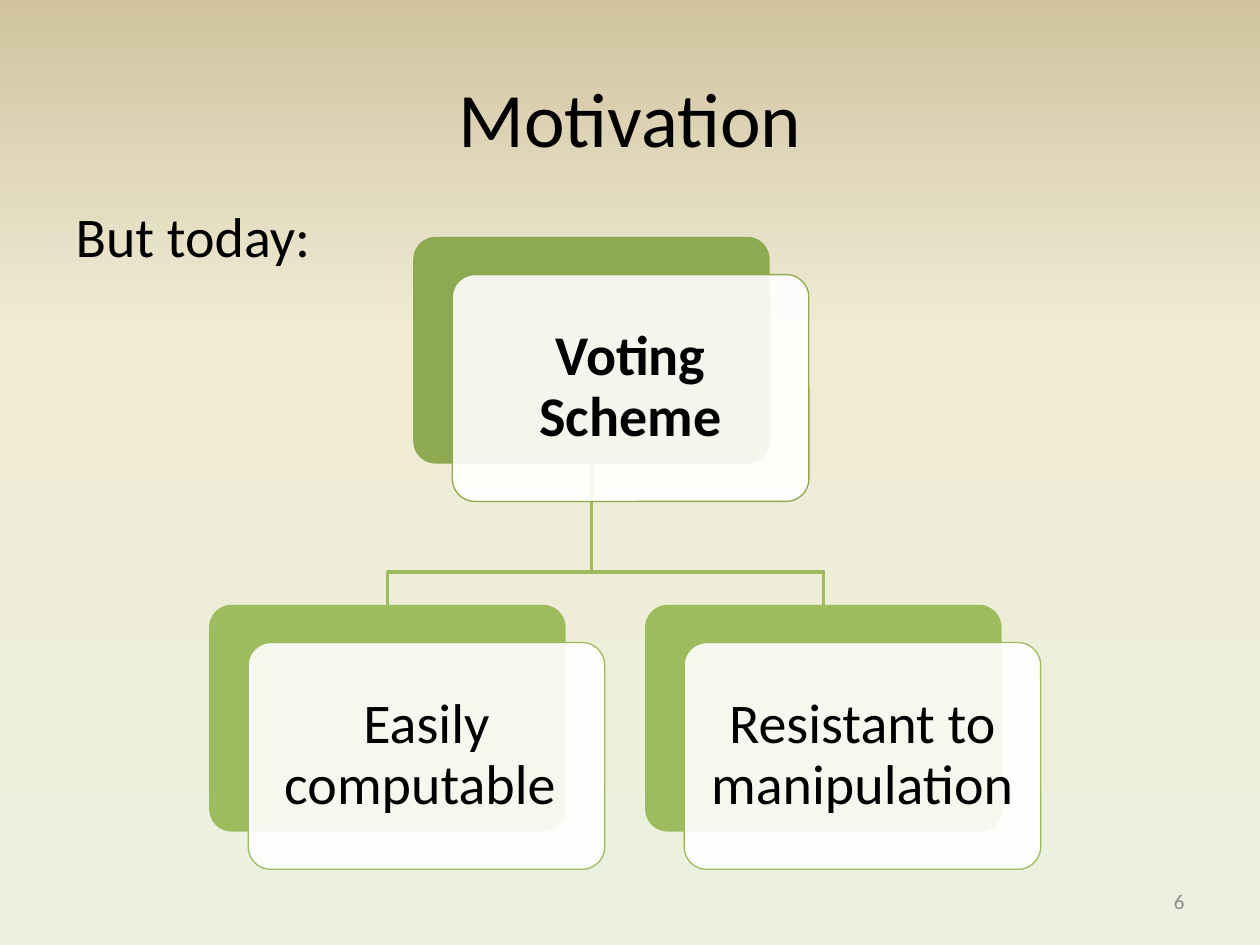
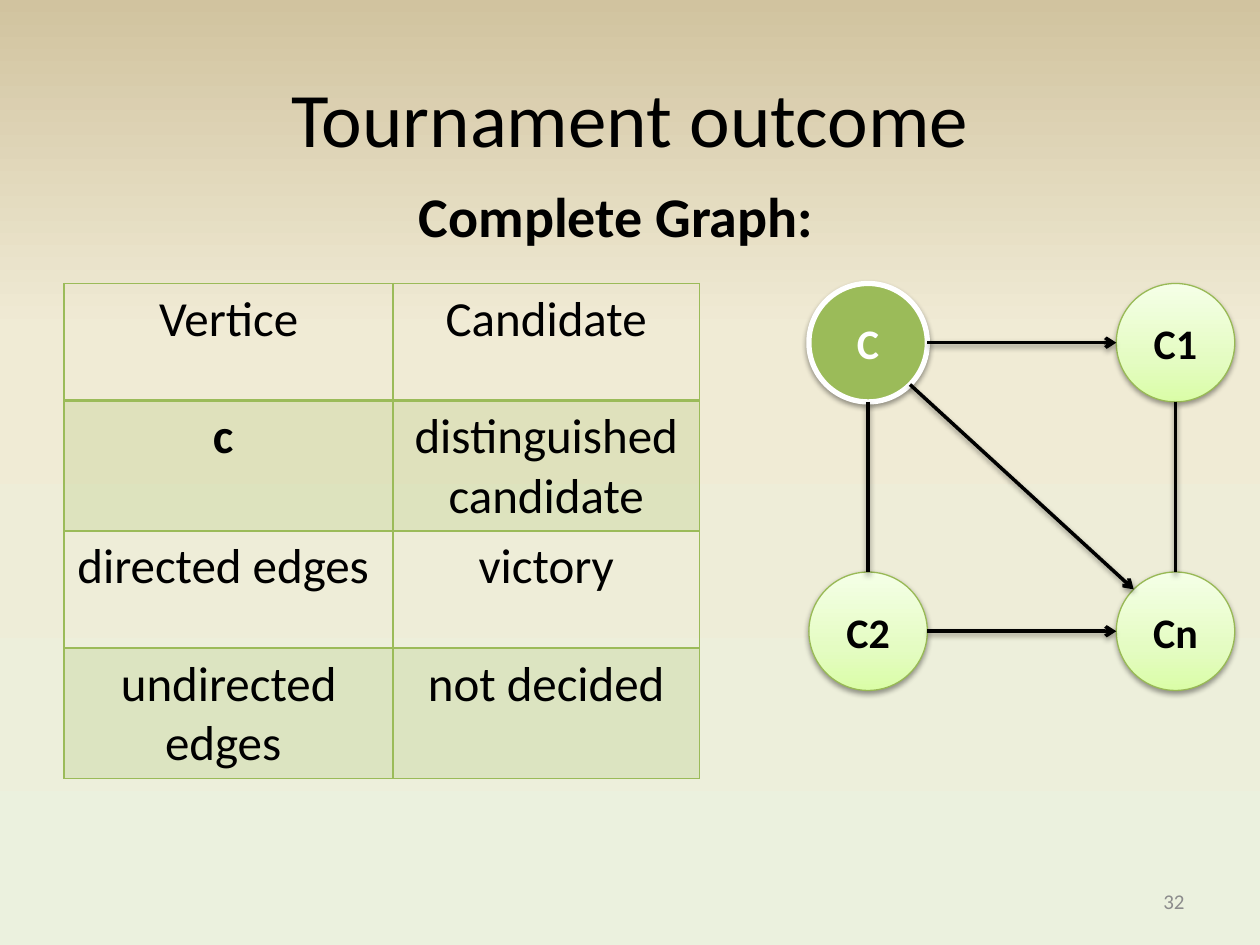
import lxml.etree
import pptx
import pptx.dml.color
import pptx.enum.shapes
import pptx.enum.text
import pptx.oxml.ns
import pptx.util

Inches = pptx.util.Inches
Pt = pptx.util.Pt
SHAPE = pptx.enum.shapes.MSO_SHAPE
ALIGN = pptx.enum.text.PP_ALIGN
MIDDLE = pptx.enum.text.MSO_ANCHOR.MIDDLE

FONT = "Calibri"
COLORS = {
    "text": "000000",
    "white": "FFFFFF",
    "page": "8C8C8C",
    "root": "8DAA51",
    "branch": "9CBC5D",
    "accent": "9BBB59",
    "node_line": "98B955",
}
BACKGROUND_STOPS = [(0, "EBF1DE"), (65, "F0EBD5"), (100, "D1C39F")]
NODE_STOPS = [(0, "DAFDA7"), (35, "E4FCC2"), (100, "F5FFE7")]

# Hierarchy cards and graph nodes, in inches
CARD_W, CARD_H = 2.83, 1.8
CARD_SHIFT_X, CARD_SHIFT_Y = 0.31, 0.3
NODE_SIZE = 0.94


# Shared helpers
def rgb(name):
    return pptx.dml.color.RGBColor.from_string(COLORS[name])


def add_xml(parent, tag, **attributes):
    return lxml.etree.SubElement(parent, pptx.oxml.ns.qn(tag), **attributes)


def format_paragraph(paragraph, size, color="text", bold=False, align=ALIGN.CENTER):
    paragraph.alignment = align
    font = paragraph.font
    font.name, font.size, font.bold = FONT, Pt(size), bold
    font.color.rgb = rgb(color)


def write(frame, text, size, **style):
    frame.text = text
    frame.word_wrap = True
    frame.vertical_anchor = MIDDLE
    format_paragraph(frame.paragraphs[0], size, **style)


def place(shape, left, top, width, height):
    shape.left, shape.top = Inches(left), Inches(top)
    shape.width, shape.height = Inches(width), Inches(height)


def set_line(line, color, width):
    line.color.rgb = rgb(color)
    line.width = Pt(width)


def paint_gradient(fill, owner, stops):
    fill.gradient()
    fill.gradient_angle = 90
    stop_list = owner.xpath(".//a:gsLst")[0]
    for default_stop in list(stop_list):
        stop_list.remove(default_stop)
    for position, color in stops:
        stop = add_xml(stop_list, "a:gs", pos=str(position * 1000))
        add_xml(stop, "a:srgbClr", val=color)


def set_opacity(owner, percent):
    color = owner.xpath(".//p:spPr/a:solidFill/a:srgbClr | .//a:tcPr/a:solidFill/a:srgbClr")[0]
    add_xml(color, "a:alpha", val=str(percent * 1000))


def drop_shadow(shape):
    effects = add_xml(shape._element.spPr, "a:effectLst")
    shadow = add_xml(effects, "a:outerShdw", blurRad="40000", dist="20000",
                     dir="5400000", rotWithShape="0")
    add_xml(add_xml(shadow, "a:srgbClr", val=COLORS["text"]), "a:alpha", val="38000")


def add_content_slide(deck, title, lead, lead_box, page, **lead_style):
    slide = deck.slides.add_slide(deck.slide_layouts[1])
    heading, body = slide.placeholders
    place(heading, 0.5, 0.3, 9, 1.25)
    write(heading.text_frame, title, 44)

    place(body, *lead_box)
    body.text_frame.text = lead
    paragraph = body.text_frame.paragraphs[0]
    format_paragraph(paragraph, 32, **lead_style)
    properties = paragraph._p.get_or_add_pPr()
    properties.set("marL", str(Inches(0.38)))
    properties.set("indent", str(-Inches(0.38)))
    bullet = properties.makeelement(pptx.oxml.ns.qn("a:buNone"))
    properties.xpath("a:defRPr")[0].addprevious(bullet)

    footer = slide.shapes.add_textbox(Inches(7.17), Inches(6.95), Inches(2.33), Inches(0.4))
    write(footer.text_frame, page, 12, color="page", align=ALIGN.RIGHT)
    return slide


# Hierarchy
def add_branch(slide, parent, child):
    """Draw an elbow from the bottom of the parent card to the top of the child."""
    start_x, end_x = (Inches(left + CARD_W / 2) for left in (parent[0], child[0]))
    start_y, bend_y, end_y = Inches(parent[1] + CARD_H), Inches(4.54), Inches(child[1])
    builder = slide.shapes.build_freeform(start_x, start_y)
    builder.add_line_segments([(start_x, bend_y), (end_x, bend_y), (end_x, end_y)], close=False)
    elbow = builder.convert_to_shape()
    elbow.shadow.inherit = False
    elbow.fill.background()
    set_line(elbow.line, "branch", 2)


def add_rounded(slide, left, top, color):
    panel = slide.shapes.add_shape(SHAPE.ROUNDED_RECTANGLE, Inches(left), Inches(top),
                                   Inches(CARD_W), Inches(CARD_H))
    panel.adjustments[0] = 0.1
    panel.shadow.inherit = False
    panel.fill.solid()
    panel.fill.fore_color.rgb = rgb(color)
    return panel


def add_card(slide, corner, text, color, bold=False):
    left, top = corner
    add_rounded(slide, left, top, color).line.fill.background()
    front = add_rounded(slide, left + CARD_SHIFT_X, top + CARD_SHIFT_Y, "white")
    set_opacity(front._element, 90)
    set_line(front.line, color, 0.75)
    frame = front.text_frame
    write(frame, text, 32, bold=bold)
    frame.margin_left = frame.margin_right = Inches(0.08)
    frame.paragraphs[0].line_spacing = 0.9


# Graph
def add_node(slide, center, label, distinguished=False):
    left, top = (Inches(value - NODE_SIZE / 2) for value in center)
    node = slide.shapes.add_shape(SHAPE.FLOWCHART_CONNECTOR, left, top,
                                  Inches(NODE_SIZE), Inches(NODE_SIZE))
    if distinguished:
        node.fill.solid()
        node.fill.fore_color.rgb = rgb("accent")
        set_line(node.line, "white", 3)
    else:
        paint_gradient(node.fill, node._element, NODE_STOPS)
        set_line(node.line, "node_line", 0.75)
    write(node.text_frame, label, 24, color="white" if distinguished else "text", bold=True)
    drop_shadow(node)


def add_edge(slide, start, end, directed):
    """Join the rims of two nodes given by their centres."""
    dx, dy = end[0] - start[0], end[1] - start[1]
    share = NODE_SIZE / 2 / (dx ** 2 + dy ** 2) ** 0.5
    if dx and dy:  # diagonal edges meet the rims at 45 degrees
        step_x = step_y = NODE_SIZE / 2 * 0.5 ** 0.5
    else:
        step_x, step_y = dx * share, dy * share
    edge = slide.shapes.add_connector(
        pptx.enum.shapes.MSO_CONNECTOR.STRAIGHT,
        Inches(start[0] + step_x), Inches(start[1] + step_y),
        Inches(end[0] - step_x), Inches(end[1] - step_y))
    set_line(edge.line, "text", 2)
    if directed:
        add_xml(edge._element.xpath(".//a:ln")[0], "a:tailEnd", type="arrow")
    drop_shadow(edge)


# Table
def set_borders(cell, top, bottom):
    properties = cell._tc.get_or_add_tcPr()
    widths = {"a:lnL": 1, "a:lnR": 1, "a:lnT": top, "a:lnB": bottom}
    for index, (side, width) in enumerate(widths.items()):
        border = add_xml(properties, side, w=str(Pt(width)))
        add_xml(add_xml(border, "a:solidFill"), "a:srgbClr", val=COLORS["accent"])
        properties.insert(index, border)


def add_legend_table(slide, rows, column_widths, row_height):
    table = slide.shapes.add_table(
        len(rows), len(column_widths), Inches(0.51), Inches(2.25),
        Inches(sum(column_widths)), Inches(row_height * len(rows))).table
    table.first_row = table.horz_banding = False
    for column, width in zip(table.columns, column_widths):
        column.width = Inches(width)
    for r, texts in enumerate(rows):
        for c, text in enumerate(texts):
            cell = table.cell(r, c)
            cell.text = text
            format_paragraph(cell.text_frame.paragraphs[0], 28, bold=text == "c ")
            if r % 2:
                cell.fill.solid()
                cell.fill.fore_color.rgb = rgb("accent")
                set_opacity(cell._tc, 20)
            else:
                cell.fill.background()
            set_borders(cell, top=2 if r == 1 else 1, bottom=2 if r == 0 else 1)


# Slides
def build_motivation(deck):
    slide = add_content_slide(deck, "Motivation", "But today:", (0.5, 1.55, 9, 5.15), "6",
                              align=ALIGN.LEFT)
    scheme = (3.28, 1.88)
    goals = {"Easily computable ": (1.66, 4.8), "Resistant to manipulation": (5.12, 4.8)}
    for corner in goals.values():
        add_branch(slide, scheme, corner)
    add_card(slide, scheme, "Voting Scheme", "root", bold=True)
    for text, corner in goals.items():
        add_card(slide, corner, text, "branch")


def build_tournament(deck):
    slide = add_content_slide(deck, "Tournament outcome", "Complete Graph:",
                              (0.28, 1.39, 9.22, 5.31), "32", bold=True)
    left, right, top, bottom = 6.89, 9.33, 2.72, 5.01
    candidates = {"C": (left, top), "C2": (left, bottom),
                  "Cn": (right, bottom), "C1": (right, top)}
    for label, center in candidates.items():
        add_node(slide, center, label, distinguished=label == "C")
    edges = [("C", "C1", True), ("C", "Cn", True), ("C2", "Cn", True),
             ("C1", "Cn", False), ("C", "C2", False)]
    for start, end, directed in edges:
        add_edge(slide, candidates[start], candidates[end], directed)
    add_legend_table(slide, [
        ("Vertice", "Candidate"),
        ("c ", "distinguished candidate"),
        ("directed edges ", "victory"),
        ("undirected edges ", "not decided"),
    ], column_widths=(2.61, 2.43), row_height=0.93)


def main():
    deck = pptx.Presentation()
    deck.slide_width, deck.slide_height = Inches(10), Inches(7.5)
    master = deck.slide_master
    paint_gradient(master.background.fill, master._element, BACKGROUND_STOPS)
    build_motivation(deck)
    build_tournament(deck)
    deck.save("out.pptx")


if __name__ == "__main__":
    main()
